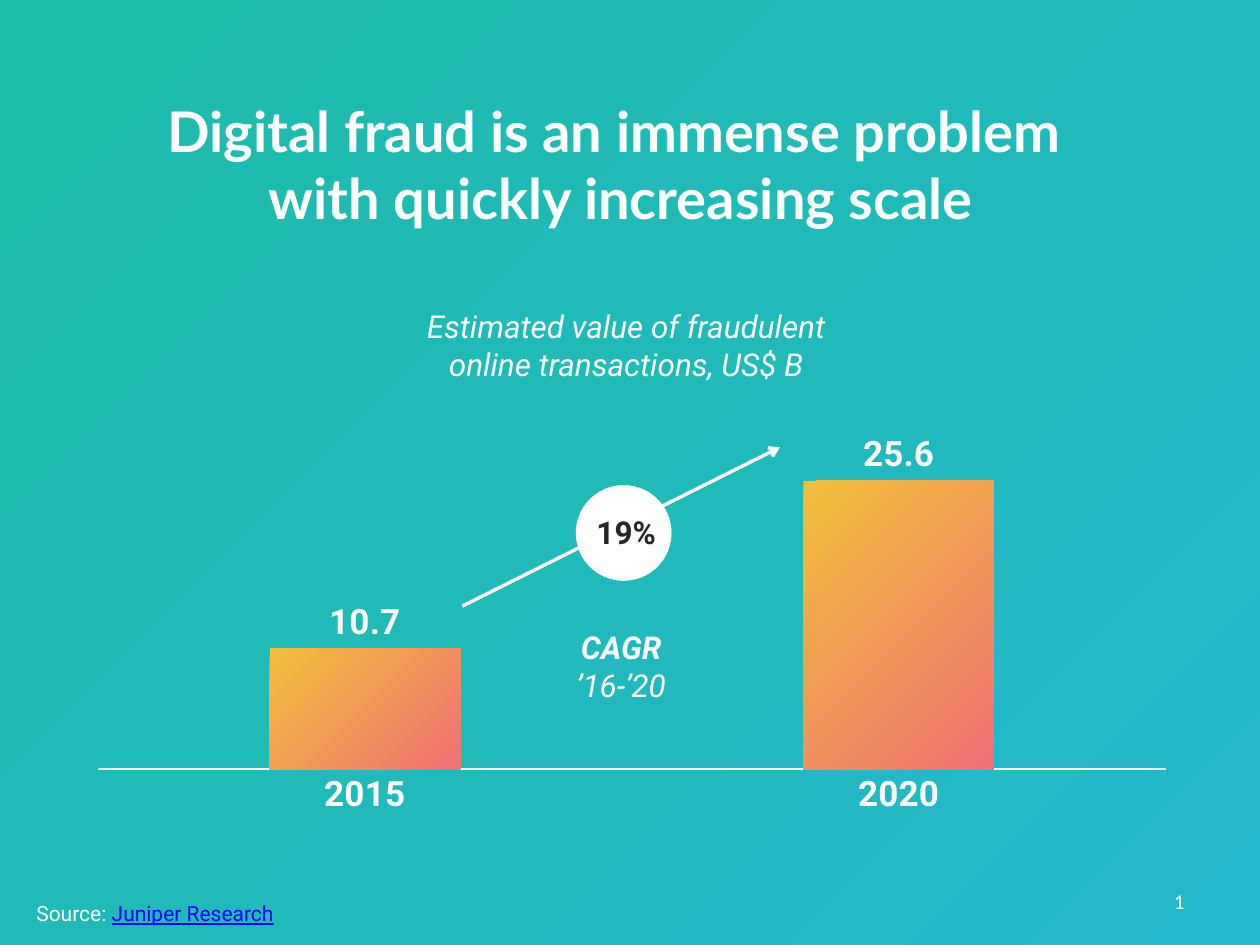
from copy import deepcopy

from lxml import etree
from pptx import Presentation
from pptx import util as u
from pptx.chart.data import CategoryChartData
from pptx.dml.color import RGBColor
from pptx.enum import chart as charts, shapes, text
from pptx.oxml import ns

WHITE = RGBColor(0xFF, 0xFF, 0xFF)
BLACK = RGBColor(0, 0, 0)
DARK = RGBColor(0x26, 0x26, 0x26)
LINK = RGBColor(0x00, 0x00, 0xFF)
BACKDROP = [
    (0, RGBColor(0x1D, 0xBC, 0xA9)),
    (0.41, RGBColor(0x20, 0xBA, 0xB7)),
    (1, RGBColor(0x24, 0xB8, 0xCC)),
]
BAR = [(0, RGBColor(0xF2, 0xBF, 0x3A)), (1, RGBColor(0xEF, 0x71, 0x74))]

CENTER = text.PP_ALIGN.CENTER
MIDDLE = text.MSO_ANCHOR.MIDDLE
BOTTOM = text.MSO_ANCHOR.BOTTOM


def inches(*lengths):
    return [u.Inches(length) for length in lengths]


def style_font(font, size, color=WHITE, name="Roboto", bold=False, italic=False,
               underline=False):
    font.size = u.Pt(size)
    font.color.rgb = color
    font.name = name
    font.bold = bold
    font.italic = italic
    font.underline = underline


def paint_gradient(fill, colors):
    fill.gradient_angle = 315
    for stop, (position, color) in zip(fill.gradient_stops, colors):
        stop.position = position
        stop.color.rgb = color


def paint_background(page):
    fill = page.background.fill
    fill.gradient()
    stop_list = page.element.find(".//" + ns.qn("a:gsLst"))
    stop_list.append(deepcopy(stop_list[-1]))
    paint_gradient(fill, BACKDROP)


def write(frame, paragraphs, anchor, align=CENTER, wrap=True):
    frame.word_wrap = wrap
    frame.vertical_anchor = anchor
    for index, spans in enumerate(paragraphs):
        para = frame.add_paragraph() if index else frame.paragraphs[0]
        para.alignment = align
        for words, style in spans:
            span = para.add_run()
            span.text = words
            style_font(span.font, **style)


def add_text(page, place, paragraphs, anchor, align=CENTER):
    box = page.shapes.add_textbox(*inches(*place))
    write(box.text_frame, paragraphs, anchor, align)
    return box


def add_plain_shape(page, kind, place, color=None):
    shape = page.shapes.add_shape(kind, *inches(*place))
    shape.shadow.inherit = False
    shape.line.fill.background()
    if color is None:
        shape.fill.background()
    else:
        shape.fill.solid()
        shape.fill.fore_color.rgb = color
    return shape


def add_caption(page, place, paragraphs):
    caption = add_plain_shape(page, shapes.MSO_SHAPE.PENTAGON, place)
    caption.adjustments[0] = 0
    write(caption.text_frame, paragraphs, MIDDLE)


def add_title(page, place, lines):
    style = dict(size=32, name="Lato", bold=True)
    title = add_text(page, place, [[(lines[0], style)]], BOTTOM)
    title.text_frame.margin_bottom = u.Inches(0.03)
    para = title.text_frame.paragraphs[0]
    para.add_line_break()
    span = para.add_run()
    span.text = lines[1]
    style_font(span.font, **style)


def add_arrow(page, start, end):
    arrow = page.shapes.add_connector(
        shapes.MSO_CONNECTOR.STRAIGHT, *inches(*start, *end))
    arrow.line.color.rgb = WHITE
    arrow.line.width = u.Pt(2)
    etree.SubElement(arrow.line._get_or_add_ln(), ns.qn("a:tailEnd"), type="arrow")
    etree.SubElement(arrow._element.spPr, ns.qn("a:effectLst"))


def set_plot_layout(chart, x, y, w, h):
    area = chart._chartSpace.find(".//" + ns.qn("c:plotArea"))
    for old in area.findall(ns.qn("c:layout")):
        area.remove(old)
    layout = etree.Element(ns.qn("c:layout"))
    manual = etree.SubElement(layout, ns.qn("c:manualLayout"))
    settings = [("layoutTarget", "inner"), ("xMode", "edge"), ("yMode", "edge"),
                ("x", x), ("y", y), ("w", w), ("h", h)]
    for tag, value in settings:
        etree.SubElement(manual, ns.qn("c:" + tag), val=str(value))
    area.insert(0, layout)


def add_fraud_chart(page, place):
    data = CategoryChartData()
    data.categories = ["2015", "2020"]
    data.add_series("Series 1", [10.7, 25.6])
    chart = page.shapes.add_chart(
        charts.XL_CHART_TYPE.COLUMN_CLUSTERED, *inches(*place), data).chart
    chart.has_legend = False
    chart.has_title = False
    style_font(chart.font, 18, BLACK, "Calibri")
    set_plot_layout(chart, 0.03, 0.07, 0.95, 0.78)

    value_axis = chart.value_axis
    value_axis.minimum_scale = 0
    value_axis.maximum_scale = 30
    value_axis.has_major_gridlines = False
    value_axis.visible = False

    category_axis = chart.category_axis
    category_axis.major_tick_mark = charts.XL_TICK_MARK.NONE
    category_axis.format.line.color.rgb = WHITE
    category_axis.format.line.width = u.Pt(0.75)
    style_font(category_axis.tick_labels.font, 20, bold=True)

    plot = chart.plots[0]
    plot.gap_width = 180
    plot.vary_by_categories = False
    series = plot.series[0]
    for index in range(len(series.values)):
        fill = series.points[index].format.fill
        fill.gradient()
        paint_gradient(fill, BAR)
    labels = series.data_labels
    labels.show_value = True
    labels.position = charts.XL_LABEL_POSITION.OUTSIDE_END
    style_font(labels.font, 20, bold=True)


def main():
    deck = Presentation()
    deck.slide_width, deck.slide_height = inches(10, 7.5)
    page = deck.slides.add_slide(deck.slide_layouts[6])
    paint_background(page)

    add_fraud_chart(page, (0.51, 3.18, 8.92, 3.44))
    add_title(page, (0.43, 0.74, 9, 1.12),
              ["Digital fraud is an immense problem ",
               "with quickly increasing scale"])

    italic = dict(size=18, italic=True)
    add_caption(page, (0.62, 2.28, 8.7, 0.91),
                [[("Estimated value of fraudulent", italic)],
                 [("online transactions, US$ B", italic)]])
    add_arrow(page, (3.67, 4.81), (6.19, 3.55))

    oval = shapes.MSO_SHAPE.OVAL
    add_plain_shape(page, oval, (4.57, 3.85, 0.76, 0.76), WHITE)
    rate = add_plain_shape(page, oval, (4.44, 3.98, 1.06, 0.49))
    write(rate.text_frame, [[("19%", dict(size=18, color=DARK, bold=True))]],
          MIDDLE, wrap=False)
    add_caption(page, (3.83, 5, 2.2, 0.57),
                [[("CAGR", dict(italic, bold=True))], [("’16-’20", italic)]])

    add_text(page, (0.19, 7.1, 7.95, 0.3),
             [[("Source: ", dict(size=12)),
               ("Juniper Research", dict(size=12, color=LINK, underline=True))]],
             BOTTOM, text.PP_ALIGN.LEFT)
    add_text(page, (7.17, 6.95, 2.33, 0.4),
             [[("1", dict(size=12, name="Calibri"))]], MIDDLE, text.PP_ALIGN.RIGHT)

    deck.save("out.pptx")


if __name__ == "__main__":
    main()
